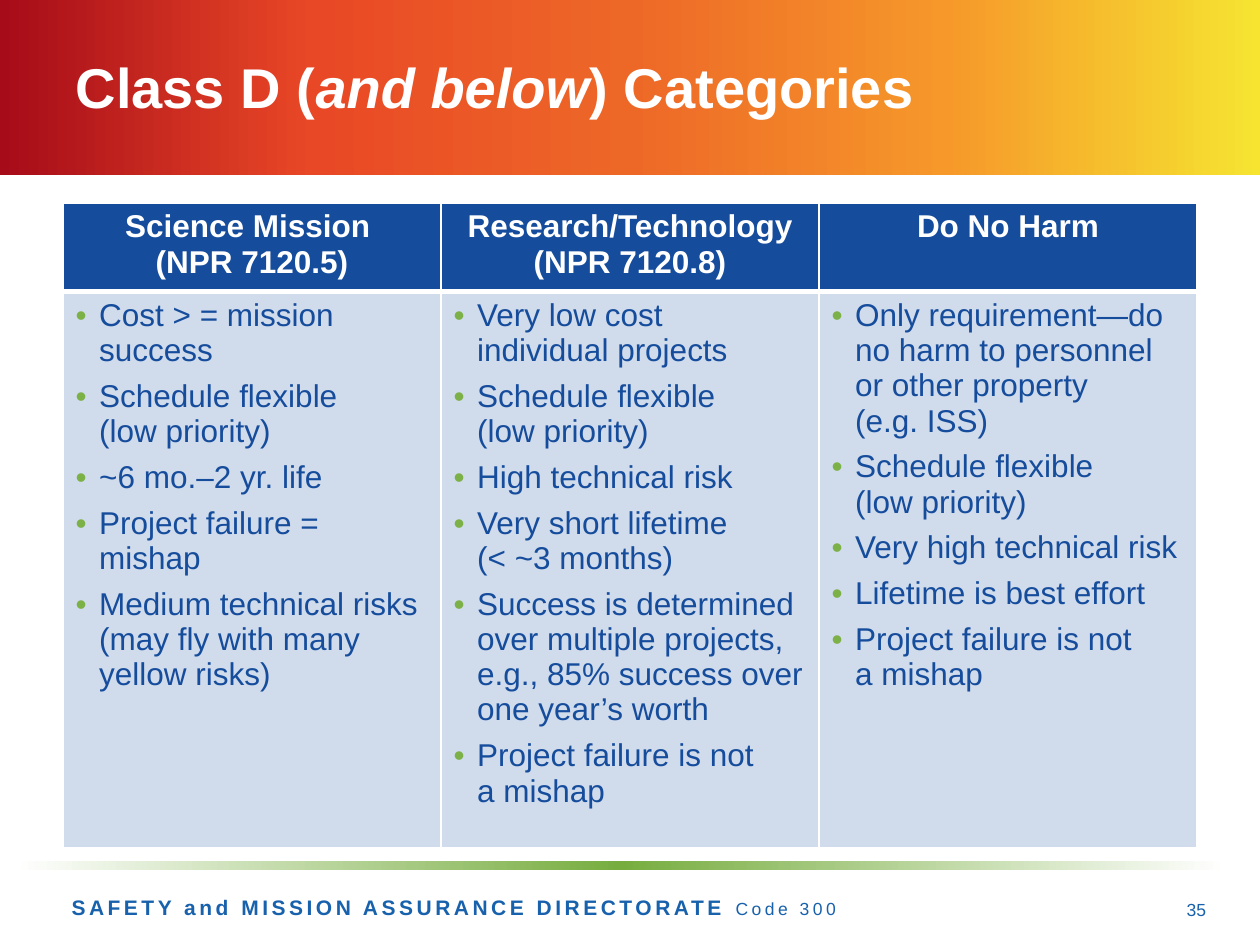
import pptx
import pptx.dml.color
import pptx.enum.shapes
import pptx.enum.text
import pptx.oxml.ns
import pptx.oxml.xmlchemy
import pptx.util
from lxml import etree

Pt = pptx.util.Pt
qn = pptx.oxml.ns.qn
ALIGN = pptx.enum.text.PP_ALIGN
MIDDLE = pptx.enum.text.MSO_ANCHOR.MIDDLE

BANNER_STOPS = [(0, "A60B19"), (25, "E94826"), (50, "ED6827"),
                (75, "F6982A"), (100, "F6E431")]
RULE_STOPS = [(0, "FFFFFF"), (50, "77AD3F"), (100, "FFFFFF")]

HEADERS = [
    ["Science Mission ", "(NPR 7120.5)"],
    ["Research/Technology (NPR 7120.8)"],
    ["Do No Harm"],
]
LISTS = [
    ["Cost > = mission success",
     "Schedule flexible \n(low priority)",
     "~6 mo.–2 yr. life",
     "Project failure = mishap",
     "Medium technical risks (may fly with many yellow risks)"],
    ["Very low cost \nindividual projects",
     "Schedule flexible \n(low priority)",
     "High technical risk",
     "Very short lifetime \n(< ~3 months)",
     "Success is determined over multiple projects, e.g., 85% success over "
     "one year’s worth",
     "Project failure is not \na mishap"],
    ["Only requirement—do no harm to personnel or other property \n(e.g. ISS)",
     "Schedule flexible \n(low priority)",
     "Very high technical risk",
     "Lifetime is best effort",
     "Project failure is not \na mishap"],
]


def color(value):
    return pptx.dml.color.RGBColor.from_string(value)


def add_color(parent, value):
    return etree.SubElement(parent, qn("a:srgbClr"), val=value)


class CategorySlide:
    font = "Arial"
    white = "FFFFFF"
    navy = "154C9C"
    blue = "1861AC"
    green = "7CB147"

    def __init__(self, deck):
        self.page = deck.slides.add_slide(deck.slide_layouts[5])

    def span(self, para, text, size, shade, bold=False, italic=False, spacing=0):
        """Add text to a paragraph, one run per line."""
        for number, line in enumerate(text.split("\n")):
            if number:
                para.add_line_break()
            run = para.add_run()
            run.text = line
            run.font.name = self.font
            run.font.size = Pt(size)
            run.font.bold = bold
            run.font.italic = italic
            run.font.color.rgb = color(shade)
            if spacing:
                run.font._element.set("spc", str(spacing * 100))

    def gradient_bar(self, left, top, width, height, stops):
        bar = self.page.shapes.add_shape(
            pptx.enum.shapes.MSO_SHAPE.RECTANGLE,
            Pt(left), Pt(top), Pt(width), Pt(height))
        bar.shadow.inherit = False
        bar.line.fill.background()
        bar.fill.gradient()
        bar.fill.gradient_angle = 0
        stop_list = bar.element.find(".//" + qn("a:gsLst"))
        for old in list(stop_list):
            stop_list.remove(old)
        for position, shade in stops:
            stop = etree.SubElement(stop_list, qn("a:gs"), pos=str(position * 1000))
            add_color(stop, shade)

    def title(self, left, top, width, height, parts):
        box = self.page.shapes.title
        box.left, box.top, box.width, box.height = map(Pt, (left, top, width, height))
        box.text_frame.vertical_anchor = MIDDLE
        para = box.text_frame.paragraphs[0]
        para.alignment = ALIGN.LEFT
        para.line_spacing = 0.9
        for text, italic in parts:
            self.span(para, text, 32, self.white, bold=True, italic=italic)
        # Bring the title in front of the banner
        box.element.getparent().append(box.element)

    def text(self, left, top, width, height, parts, align=ALIGN.LEFT, anchor=None):
        box = self.page.shapes.add_textbox(Pt(left), Pt(top), Pt(width), Pt(height))
        box.text_frame.word_wrap = True
        box.text_frame.vertical_anchor = anchor
        para = box.text_frame.paragraphs[0]
        para.alignment = align
        for text, size, bold, spacing in parts:
            self.span(para, text, size, self.blue, bold=bold, spacing=spacing)

    def bullet(self, para):
        props = para._p.get_or_add_pPr()
        props.set("marL", str(Pt(13.5)))
        props.set("indent", str(Pt(-13.5)))
        add_color(etree.SubElement(props, qn("a:buClr")), self.green)
        etree.SubElement(props, qn("a:buFont"), typeface=self.font)
        etree.SubElement(props, qn("a:buChar"), char="•")

    def cell(self, cell, texts, header):
        cell.fill.solid()
        cell.fill.fore_color.rgb = color(self.navy)
        props = cell._tc.get_or_add_tcPr()
        if not header:
            fill_color = props.find(".//" + qn("a:srgbClr"))
            etree.SubElement(fill_color, qn("a:alpha"), val="20000")

        # White borders, with a heavy line between header and body
        heavy = "a:lnB" if header else "a:lnT"
        for place, tag in enumerate(("a:lnL", "a:lnR", "a:lnT", "a:lnB")):
            border = etree.Element(qn(tag), w=str(Pt(3 if tag == heavy else 1)))
            add_color(etree.SubElement(border, qn("a:solidFill")), self.white)
            props.insert(place, border)

        frame = cell.text_frame
        for number, text in enumerate(texts):
            para = frame.add_paragraph() if number else frame.paragraphs[0]
            if header:
                para.alignment = ALIGN.CENTER
            else:
                para.space_before = Pt(6 if number else 0)
                self.bullet(para)
            self.span(para, text, 18, self.white if header else self.navy, bold=header)

    def table(self, left, top, width, row_heights, rows):
        columns = len(rows[0])
        table = self.page.shapes.add_table(
            len(rows), columns, Pt(left), Pt(top), Pt(width),
            Pt(sum(row_heights))).table
        table.horz_banding = False
        for row, (height, contents) in enumerate(zip(row_heights, rows)):
            table.rows[row].height = Pt(height)
            for column, texts in enumerate(contents):
                self.cell(table.cell(row, column), texts, header=row == 0)


def main():
    deck = pptx.Presentation()
    deck.slide_width, deck.slide_height = Pt(720), Pt(540)
    slide = CategorySlide(deck)

    # Banner and title
    slide.gradient_bar(0, 0, 720, 100, BANNER_STOPS)
    slide.title(36, 9.4, 648, 84, [("Class D (", False), ("and below", True),
                                   (") Categories", False)])

    # Category table
    slide.table(36, 116, 648, [50.5, 318], [HEADERS, LISTS])

    # Footer
    slide.gradient_bar(8.6, 492, 692, 5, RULE_STOPS)
    slide.text(33.8, 507.6, 594, 21.6, [
        ("SAFETY and MISSION ASSURANCE DIRECTORATE ", 12, True, 2),
        ("Code 300", 10, False, 2)])
    slide.text(665.3, 505.4, 31, 28.8, [("35", 10, False, 0)],
               align=ALIGN.RIGHT, anchor=MIDDLE)

    deck.save("out.pptx")


if __name__ == "__main__":
    main()
